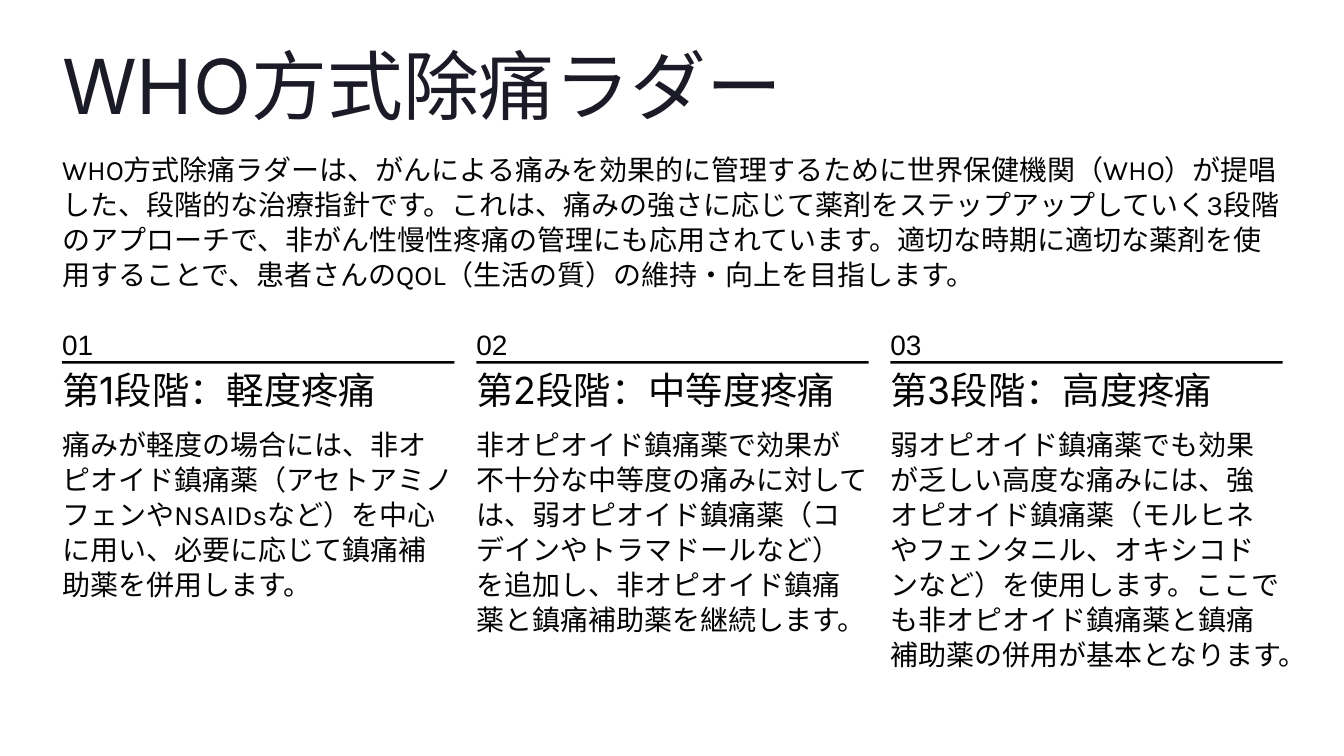
"""Build a slide on the three steps of the WHO analgesic ladder."""
from dataclasses import dataclass

from pptx import Presentation
from pptx.dml.color import RGBColor
from pptx.enum.shapes import MSO_SHAPE
from pptx.util import Inches, Pt

RECTANGLE = MSO_SHAPE.RECTANGLE


@dataclass(frozen=True)
class Theme:
    title_color: RGBColor = RGBColor(0x1B, 0x1B, 0x27)
    ink: RGBColor = RGBColor(0x03, 0x03, 0x03)
    heading_font: str = "Inter"
    body_font: str = "Karla"
    number_font: str = "Arial"
    title_size: float = 65
    heading_size: float = 32
    body_size: float = 24
    title_leading: float = 81.5
    heading_leading: float = 29.5
    body_leading: float = 30


THEME = Theme()

prs = Presentation()
prs.slide_width, prs.slide_height = Inches(16), Inches(9)
slide = prs.slides.add_slide(prs.slide_layouts[6])


def add_text(text, *, left, top, width, height, font=THEME.body_font,
             size=THEME.body_size, leading=THEME.body_leading, color=THEME.ink):
    box = slide.shapes.add_textbox(Inches(left), Inches(top), Inches(width), Inches(height))
    frame = box.text_frame
    frame.margin_left = frame.margin_right = frame.margin_top = frame.margin_bottom = 0
    frame.word_wrap = True
    paragraph = frame.paragraphs[0]
    paragraph.line_spacing = Pt(leading)
    for index, line in enumerate(text.split("\n")):
        if index:
            paragraph.add_line_break()
        run = paragraph.add_run()
        run.text = line
        run.font.name = font
        run.font.size = Pt(size)
        run.font.color.rgb = color


MARGIN = 0.74
COLUMN_WIDTH = 4.67
COLUMN_STEP = 4.93

add_text("WHO方式除痛ラダー", left=MARGIN, top=0.41, width=9.09, height=1.14,
         font=THEME.heading_font, size=THEME.title_size,
         leading=THEME.title_leading, color=THEME.title_color)

introduction = (
    "WHO方式除痛ラダーは、がんによる痛みを効果的に管理するために世界保健機関（WHO）が提唱した、"
    "段階的な治療指針です。これは、痛みの強さに応じて薬剤をステップアップしていく3段階のアプローチで、"
    "非がん性慢性疼痛の管理にも応用されています。適切な時期に適切な薬剤を使用することで、"
    "患者さんのQOL（生活の質）の維持・向上を目指します。"
)
add_text(introduction, left=MARGIN, top=1.8, width=14.52, height=1.26)

steps = [
    ("軽度疼痛", 1.69,
     "痛みが軽度の場合には、非オ\n"
     "ピオイド鎮痛薬（アセトアミノ\n"
     "フェンやNSAIDsなど）を中心\n"
     "に用い、必要に応じて鎮痛補\n"
     "助薬を併用します。"),
    ("中等度疼痛", 2.11,
     "非オピオイド鎮痛薬で効果が\n"
     "不十分な中等度の痛みに対して\n"
     "は、弱オピオイド鎮痛薬（コ\n"
     "デインやトラマドールなど）\n"
     "を追加し、非オピオイド鎮痛\n"
     "薬と鎮痛補助薬を継続します。"),
    ("高度疼痛", 2.53,
     "弱オピオイド鎮痛薬でも効果\n"
     "が乏しい高度な痛みには、強\n"
     "オピオイド鎮痛薬（モルヒネ\n"
     "やフェンタニル、オキシコド\n"
     "ンなど）を使用します。ここで\n"
     "も非オピオイド鎮痛薬と鎮痛\n"
     "補助薬の併用が基本となります。"),
]

for number, (severity, treatment_height, treatment) in enumerate(steps, start=1):
    left = MARGIN + (number - 1) * COLUMN_STEP
    add_text(f"{number:02}", left=left, top=3.88, width=0.5, height=0.33,
             font=THEME.number_font)

    divider = slide.shapes.add_shape(
        RECTANGLE, Inches(left), Inches(4.3), Inches(COLUMN_WIDTH), Inches(0.03))
    divider.shadow.inherit = False
    divider.fill.solid()
    divider.fill.fore_color.rgb = THEME.ink
    divider.line.fill.background()

    add_text(f"第{number}段階：{severity}", left=left, top=4.5, width=COLUMN_WIDTH,
             height=0.41, font=THEME.heading_font, size=THEME.heading_size,
             leading=THEME.heading_leading)
    add_text(treatment, left=left, top=5.07, width=COLUMN_WIDTH, height=treatment_height)

prs.save("out.pptx")
